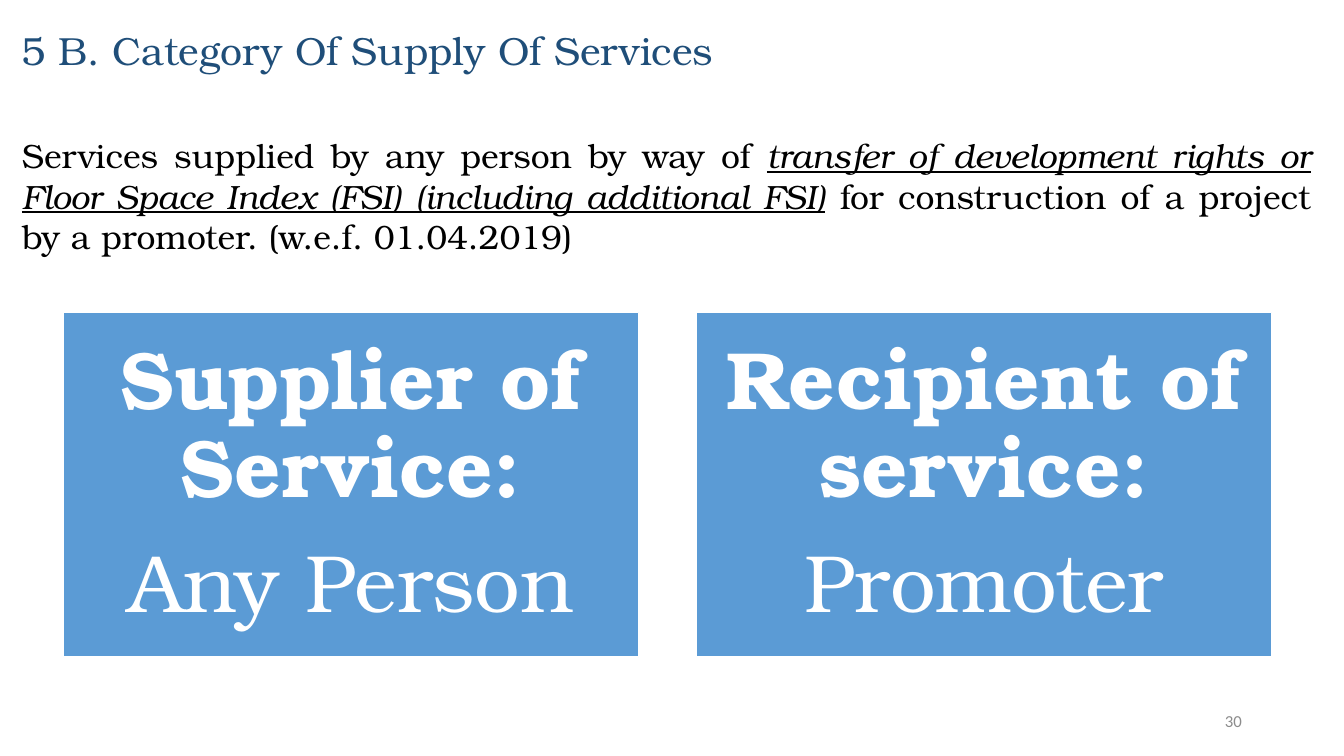
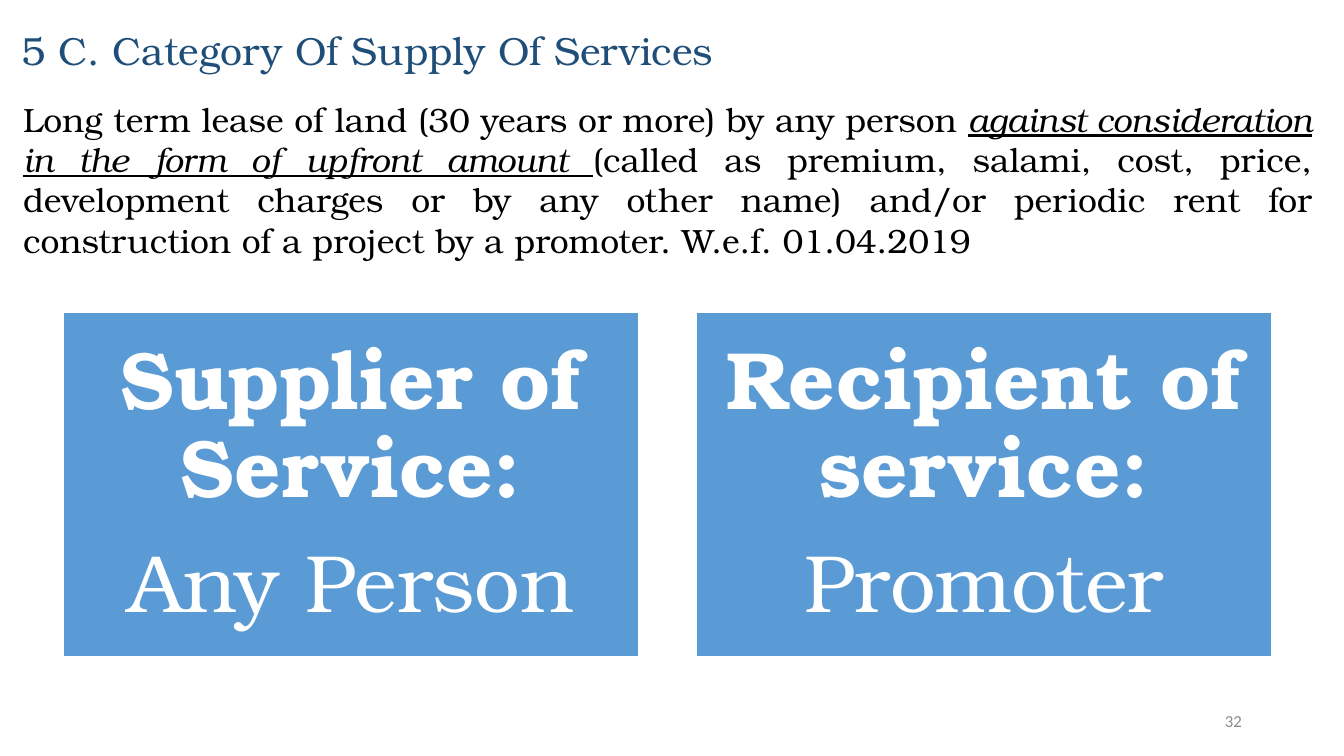
from dataclasses import dataclass
from typing import NamedTuple

import pptx
import pptx.dml.color
import pptx.enum.shapes
import pptx.enum.text
import pptx.oxml
import pptx.oxml.ns
import pptx.presentation
import pptx.shapes.autoshape
import pptx.slide
import pptx.text.text
import pptx.util


@dataclass(frozen=True)
class Theme:
    serif: str = "TeX Gyre Bonum"
    sans: str = "Calibri"
    heading: str = "1F4E79"
    body: str = "000000"
    card: str = "5B9BD5"
    white: str = "FFFFFF"
    page: str = "8C8C8C"
    heading_size: int = 28
    body_size: int = 24
    card_size: int = 58
    page_size: int = 12


class Box(NamedTuple):
    left: float
    top: float
    width: float
    height: float


class Party(NamedTuple):
    role: str
    name: str


class Category(NamedTuple):
    heading: str
    before: str
    emphasis: str
    after: str
    description_box: Box
    page: str


THEME = Theme()
HEADING_BOX = Box(0.3, 0.53, 32.64, 1.45)
FIRST_CARD = Box(1.6, 7.87, 14.5, 8.69)
CARD_GAP = 1.45
CARD_INSET = 0.61
PAGE_BOX = Box(23.93, 17.65, 7.62, 1.02)

PARTIES = [
    Party("Supplier of Service:", "Any Person"),
    Party("Recipient of service:", "Promoter"),
]

CATEGORIES = [
    Category(
        "5 B. Category Of Supply Of Services",
        "Services supplied by any person by way of ",
        "transfer of development rights or Floor Space Index (FSI) "
        "(including additional FSI)",
        " for construction of a project by a promoter. (w.e.f. 01.04.2019)",
        Box(0.3, 3.28, 32.99, 3.33),
        "30",
    ),
    Category(
        "5 C. Category Of Supply Of Services",
        "Long term lease of land (30 years or more) by any person ",
        "against consideration in the form of upfront amount ",
        "(called as premium, salami, cost, price, development charges or by any "
        "other name) and/or periodic rent for construction of a project by a "
        "promoter. W.e.f. 01.04.2019",
        Box(0.33, 2.36, 32.99, 4.37),
        "32",
    ),
]


def rgb(code: str) -> pptx.dml.color.RGBColor:
    return pptx.dml.color.RGBColor.from_string(code)


def place(shape: pptx.shapes.autoshape.Shape, box: Box) -> None:
    shape.left, shape.top, shape.width, shape.height = map(pptx.util.Cm, box)


def style(font: pptx.text.text.Font, face: str, size: int, color: str) -> None:
    font.name = face
    font.size = pptx.util.Pt(size)
    font.color.rgb = rgb(color)


def add_heading(slide: pptx.slide.Slide, text: str) -> None:
    heading = slide.shapes.title
    place(heading, HEADING_BOX)
    frame = heading.text_frame
    frame.text = text
    frame.auto_size = pptx.enum.text.MSO_AUTO_SIZE.NONE
    frame.vertical_anchor = pptx.enum.text.MSO_ANCHOR.TOP
    line = frame.paragraphs[0]
    line.alignment = pptx.enum.text.PP_ALIGN.LEFT
    style(line.runs[0].font, THEME.serif, THEME.heading_size, THEME.heading)


def remove_bullet(paragraph: pptx.text.text._Paragraph) -> None:
    properties = paragraph._p.get_or_add_pPr()
    properties.set("marL", "0")
    properties.set("indent", "0")
    properties.append(pptx.oxml.parse_xml(
        f"<a:buNone {pptx.oxml.ns.nsdecls('a')}/>"))


def add_description(slide: pptx.slide.Slide, category: Category) -> None:
    description = slide.placeholders[1]
    place(description, category.description_box)
    frame = description.text_frame
    frame.auto_size = pptx.enum.text.MSO_AUTO_SIZE.NONE
    paragraph = frame.paragraphs[0]
    paragraph.alignment = pptx.enum.text.PP_ALIGN.JUSTIFY
    paragraph.space_before = pptx.util.Pt(0)
    remove_bullet(paragraph)
    for text in (category.before, category.emphasis, category.after):
        run = paragraph.add_run()
        run.text = text
        style(run.font, THEME.serif, THEME.body_size, THEME.body)
        run.font.italic = run.font.underline = text == category.emphasis


def add_card(slide: pptx.slide.Slide, party: Party, box: Box) -> None:
    card = slide.shapes.add_shape(
        pptx.enum.shapes.MSO_SHAPE.RECTANGLE, *map(pptx.util.Cm, box))
    card.shadow.inherit = False
    card.fill.solid()
    card.fill.fore_color.rgb = rgb(THEME.card)
    card.line.color.rgb = rgb(THEME.white)
    card.line.width = pptx.util.Pt(1)
    frame = card.text_frame
    frame.word_wrap = True
    frame.vertical_anchor = pptx.enum.text.MSO_ANCHOR.MIDDLE
    frame.margin_left = frame.margin_right = pptx.util.Cm(CARD_INSET)
    frame.margin_top = frame.margin_bottom = pptx.util.Cm(CARD_INSET)
    frame.text = "\n".join(party)
    for paragraph in frame.paragraphs:
        paragraph.alignment = pptx.enum.text.PP_ALIGN.CENTER
        paragraph.line_spacing = 0.9
        paragraph.space_after = pptx.util.Pt(20)
        font = paragraph.runs[0].font
        style(font, THEME.serif, THEME.card_size, THEME.white)
        font.bold = paragraph.text == party.role


def add_page_number(slide: pptx.slide.Slide, number: str) -> None:
    page = slide.shapes.add_textbox(*map(pptx.util.Cm, PAGE_BOX))
    frame = page.text_frame
    frame.word_wrap = True
    frame.vertical_anchor = pptx.enum.text.MSO_ANCHOR.MIDDLE
    frame.text = number
    line = frame.paragraphs[0]
    line.alignment = pptx.enum.text.PP_ALIGN.RIGHT
    style(line.runs[0].font, THEME.sans, THEME.page_size, THEME.page)


def add_category_slide(
    deck: pptx.presentation.Presentation, category: Category
) -> None:
    slide = deck.slides.add_slide(deck.slide_layouts[1])
    add_heading(slide, category.heading)
    add_description(slide, category)
    for column, party in enumerate(PARTIES):
        left = FIRST_CARD.left + column * (FIRST_CARD.width + CARD_GAP)
        add_card(slide, party, FIRST_CARD._replace(left=left))
    add_page_number(slide, category.page)


def main() -> None:
    deck = pptx.Presentation()
    deck.slide_width = pptx.util.Cm(33.87)
    deck.slide_height = pptx.util.Cm(19.05)
    for category in CATEGORIES:
        add_category_slide(deck, category)
    deck.save("out.pptx")


if __name__ == "__main__":
    main()
